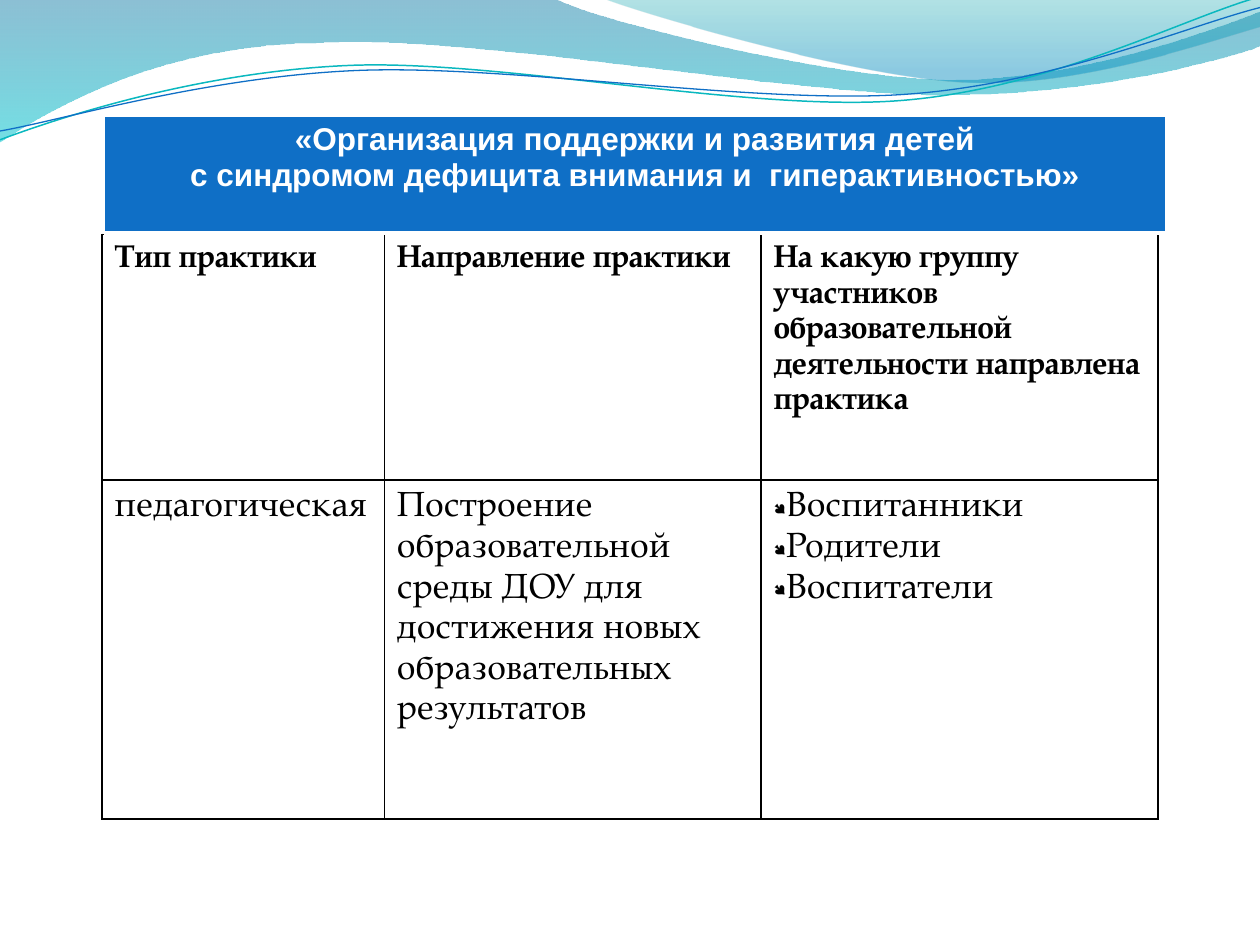
"""Build a slide with a title banner and a practice table under decorative waves."""
from lxml.etree import SubElement
from pptx import Presentation
from pptx.dml.color import RGBColor
from pptx.enum.text import PP_ALIGN as Align
from pptx.oxml.ns import qn
from pptx.util import Inches, Pt


def color(value):
    return RGBColor.from_string(value)


class Deck:
    BODY_FONT, TITLE_FONT = "TeX Gyre Pagella", "Arial"
    BLACK, WHITE, BLUE, TEAL = "000000", "FFFFFF", "0F6FC6", "0AB8BF"

    def __init__(self):
        self.presentation = Presentation()
        self.presentation.slide_width = Inches(10)
        self.presentation.slide_height = Inches(7.5)
        self.slide = self.presentation.slides.add_slide(self.presentation.slide_layouts[6])

    def outline(self, start, segments, close):
        corners = [(Inches(x), Inches(y)) for segment in segments
                   for x, y in zip(segment[::2], segment[1::2])]
        builder = self.slide.shapes.build_freeform(*map(Inches, start))
        builder.add_line_segments(corners, close=close)
        shape = builder.convert_to_shape()
        shape.shadow.inherit = False
        steps = iter(list(shape._element.iter(qn("a:lnTo"))))
        for segment in segments:
            first = next(steps)
            if len(segment) == 6:
                first.tag = qn("a:cubicBezTo")
                for follower in (next(steps), next(steps)):
                    first.append(follower[0])
                    follower.getparent().remove(follower)
        return shape

    def wave(self, start, segments, stops):
        shape = self.outline(start, segments, True)
        shape.line.fill.background()
        shape.fill.gradient()
        shape.fill.gradient_angle = 270
        for stop, (position, value, _) in zip(shape.fill.gradient_stops, stops):
            stop.position = position
            stop.color.rgb = color(value)
        for node, (_, _, opacity) in zip(shape._element.spPr.iter(qn("a:srgbClr")), stops):
            SubElement(node, qn("a:alpha"), val=str(opacity * 1000))

    def strand(self, start, segments, value, width):
        shape = self.outline(start, segments, False)
        shape.fill.background()
        shape.line.color.rgb = color(value)
        shape.line.width = Pt(width)

    def table(self, left, top, widths, heights):
        frame = self.slide.shapes.add_table(
            len(heights), len(widths), Inches(left), Inches(top),
            Inches(sum(widths)), Inches(sum(heights)))
        grid = frame.table
        grid.first_row = grid.horz_banding = False
        for column, width in zip(grid.columns, widths):
            column.width = Inches(width)
        for row, height in zip(grid.rows, heights):
            row.height = Inches(height)
        return grid

    def borders(self, cell, value, bottom=1):
        properties = cell._tc.get_or_add_tcPr()
        for side, width in zip("LRTB", (1, 1, 1, bottom)):
            line = SubElement(properties, qn(f"a:ln{side}"), w=str(Pt(width)))
            SubElement(SubElement(line, qn("a:solidFill")), qn("a:srgbClr"), val=value)

    def text(self, cell, lines, font, size, value, bold, align=Align.LEFT, spacing=1.0):
        for index, line in enumerate(lines):
            frame = cell.text_frame
            paragraph = frame.add_paragraph() if index else frame.paragraphs[0]
            paragraph.alignment = align
            paragraph.line_spacing = spacing
            run = paragraph.add_run()
            run.text = line
            run.font.name, run.font.size, run.font.bold = font, Pt(size), bold
            run.font.color.rgb = color(value)

    def bullets(self, cell):
        for paragraph in cell.text_frame.paragraphs:
            properties = paragraph._p.get_or_add_pPr()
            SubElement(properties, qn("a:buSzPct"), val="45000")
            SubElement(properties, qn("a:buFont"), typeface="Wingdings", charset="2")
            SubElement(properties, qn("a:buChar"), char="●")

    def practices(self, rows):
        grid = self.table(0.81, 1.86, (2.24, 2.99, 3.15), (1.95, 2.69))
        for row, cells in enumerate(rows):
            for column, lines in enumerate(cells):
                cell = grid.cell(row, column)
                self.borders(cell, self.BLACK)
                cell.fill.background()
                self.text(cell, lines, self.BODY_FONT, 20 if row else 18, self.BLACK,
                          row == 0, spacing=1.15)
                if len(lines) > 1:
                    self.bullets(cell)

    def banner(self, lines):
        cell = self.table(0.83, 0.92, (8.42,), (0.93,)).cell(0, 0)
        self.borders(cell, self.WHITE, bottom=3)
        cell.fill.solid()
        cell.fill.fore_color.rgb = color(self.BLUE)
        self.text(cell, lines, self.TITLE_FONT, 18, self.WHITE, True, Align.CENTER)


def main():
    deck = Deck()
    deck.wave((0, -0.01), [
        (4.4, -0.01),
        (4.76, 0.17, 6.64, 0.63, 7.58, 0.63),
        (8.53, 0.63, 9.58, 0.26, 10, 0.09),
        (10.01, 0.36),
        (9.83, 0.44, 8.7, 0.76, 7.46, 0.75),
        (6.22, 0.75, 3.82, 0.28, 2.57, 0.34),
        (1.29, 0.35, 0.46, 0.83, -0.01, 1.13),
        (0, -0.01),
    ], [(0, "0074A1", 45), (1, "00C6CF", 55)])
    deck.wave((4.79, -0.01), [
        (5.09, 0.11, 6.82, 0.62, 7.69, 0.65),
        (8.56, 0.69, 9.61, 0.32, 10, 0.21),
        (10, 0),
        (4.79, -0.01),
    ], [(0, "00A1A9", 30), (0.8, "008BBF", 45)])
    deck.strand((0, 1.11), [
        (0.48, 0.93, 1.58, 0.57, 2.77, 0.52),
        (3.95, 0.47, 5.93, 0.89, 7.13, 0.8),
        (8.33, 0.71, 9.38, 0.15, 9.98, -0.02),
    ], deck.TEAL, 0.85)
    deck.strand((0, 1.04), [
        (0.47, 0.96, 1.64, 0.61, 2.83, 0.56),
        (4.03, 0.51, 5.97, 0.83, 7.17, 0.75),
        (8.36, 0.67, 9.41, 0.21, 10, 0.06),
    ], deck.BLUE, 0.75)
    deck.practices([
        [["Тип практики"], ["Направление практики"],
         ["На какую группу участников образовательной деятельности направлена практика"]],
        [["педагогическая"],
         ["Построение образовательной среды ДОУ для достижения новых "
          "образовательных результатов"],
         ["Воспитанники", "Родители", "Воспитатели"]],
    ])
    deck.banner(["«Организация поддержки и развития детей",
                 "с синдромом дефицита внимания и  гиперактивностью»"])
    deck.presentation.save("out.pptx")


if __name__ == "__main__":
    main()
